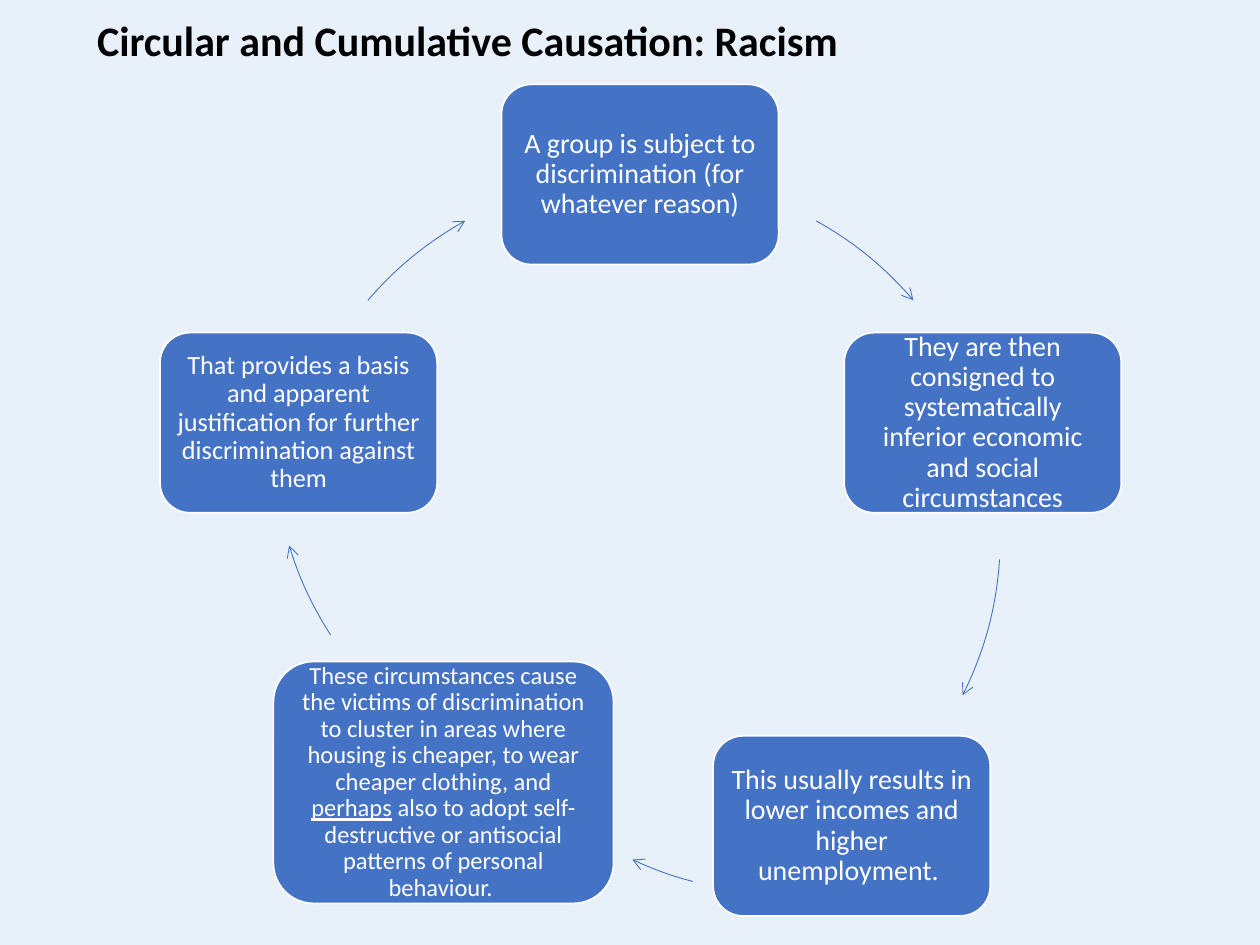
import dataclasses

import pptx
import pptx.dml.color
import pptx.enum.shapes
import pptx.enum.text
import pptx.oxml
import pptx.oxml.ns
import pptx.util

Inches = pptx.util.Inches
Pt = pptx.util.Pt
Align = pptx.enum.text.PP_ALIGN
Shape = pptx.enum.shapes.MSO_SHAPE


@dataclasses.dataclass(frozen=True)
class Theme:
    font: str = "Calibri"
    background: str = "E8F1F9"
    accent: str = "4472C4"
    light: str = "FFFFFF"
    dark: str = "000000"
    title_size: int = 24
    line_spacing: float = 0.9
    border: float = 1
    arrow: float = 0.5


THEME = Theme()
TITLE_BOX = (0.67, 0, 8.98, 0.68)
TITLE = "Circular and Cumulative Causation: Racism"
NODE_SIZE = (2.2, 1.43)
RING = 5.71

# box, type size, inset, spans as (text, underlined)
STAGES = [
    ((3.98, 0.67, *NODE_SIZE), 16, 0.07,
     [("A group is subject to discrimination (for whatever reason)", False)]),
    ((6.7, 2.64, *NODE_SIZE), 16, 0.07,
     [("They are then consigned to systematically inferior economic and "
       "social circumstances", False)]),
    ((5.66, 5.84, *NODE_SIZE), 16, 0.07,
     [("This usually results in lower incomes and higher unemployment. ", False)]),
    ((2.17, 5.25, 2.7, 1.92), 14, 0.06,
     [("These circumstances cause the victims of discrimination to cluster in "
       "areas where housing is cheaper, to wear cheaper clothing, and ", False),
      ("perhaps", True),
      (" also to adopt self-destructive or antisocial patterns of personal "
       "behaviour. ", False)]),
    ((1.27, 2.64, *NODE_SIZE), 15, 0.06,
     [("That provides a basis and apparent justification for further "
       "discrimination against them", False)]),
]

# ring left and top, then start and end in degrees clockwise from the right
ARROWS = [
    (2.23, 1.39, 299.2, 319.3),
    (2.23, 1.39, 3.9, 26.5),
    (3.37, 1.38, 104.7, 115),
    (2.17, 0.64, 147.2, 163),
    (2.23, 1.39, 220.7, 240.8),
]


def color(value):
    return pptx.dml.color.RGBColor.from_string(value)


def add_span(para, text, size, ink, bold=False, underline=False):
    span = para.add_run()
    span.text = text
    font = span.font
    font.name, font.size, font.bold = THEME.font, Pt(size), bold
    font.underline = underline
    font.color.rgb = color(ink)


def set_frame(frame, align):
    """Wrap and centre the text vertically; return its first paragraph."""
    frame.word_wrap = True
    frame.auto_size = pptx.enum.text.MSO_AUTO_SIZE.NONE
    frame.vertical_anchor = pptx.enum.text.MSO_ANCHOR.MIDDLE
    para = frame.paragraphs[0]
    para.alignment = align
    para.line_spacing = THEME.line_spacing
    return para


def add_title(page, box):
    title = page.shapes.title
    title.left, title.top, title.width, title.height = map(Inches, box)
    para = set_frame(title.text_frame, Align.LEFT)
    add_span(para, TITLE, THEME.title_size, THEME.dark, bold=True)


def add_stage(page, box, size, inset, spans):
    node = page.shapes.add_shape(Shape.ROUNDED_RECTANGLE, *map(Inches, box))
    node.shadow.inherit = False
    node.fill.solid()
    node.fill.fore_color.rgb = color(THEME.accent)
    node.line.color.rgb = color(THEME.light)
    node.line.width = Pt(THEME.border)
    frame = node.text_frame
    frame.margin_left = frame.margin_right = Inches(inset)
    frame.margin_top = frame.margin_bottom = Inches(inset)
    para = set_frame(frame, Align.CENTER)
    for text, underline in spans:
        add_span(para, text, size, THEME.light, underline=underline)


def add_arc_arrow(page, left, top, start, end):
    box = (left, top, RING, RING)
    arc = page.shapes.add_shape(Shape.ARC, *map(Inches, box))
    arc.shadow.inherit = False
    # Angles are stored in 60000ths of a degree, adjustments in 100000ths.
    for index, angle in enumerate((start, end)):
        arc.adjustments[index] = angle * 0.6
    arc.fill.background()
    arc.line.color.rgb = color(THEME.accent)
    arc.line.width = Pt(THEME.arrow)
    line = arc.line.fill._xPr
    head = pptx.oxml.parse_xml(
        f'<a:tailEnd {pptx.oxml.ns.nsdecls("a")} type="arrow"/>')
    line.append(head)


def add_cycle(page):
    for stage, arrow in zip(STAGES, ARROWS):
        add_stage(page, *stage)
        add_arc_arrow(page, *arrow)


def main():
    deck = pptx.Presentation()
    deck.slide_width, deck.slide_height = Inches(10), Inches(7.5)
    page = deck.slides.add_slide(deck.slide_layouts[5])
    page.background.fill.solid()
    page.background.fill.fore_color.rgb = color(THEME.background)
    add_title(page, TITLE_BOX)
    add_cycle(page)
    deck.save("out.pptx")


if __name__ == "__main__":
    main()
